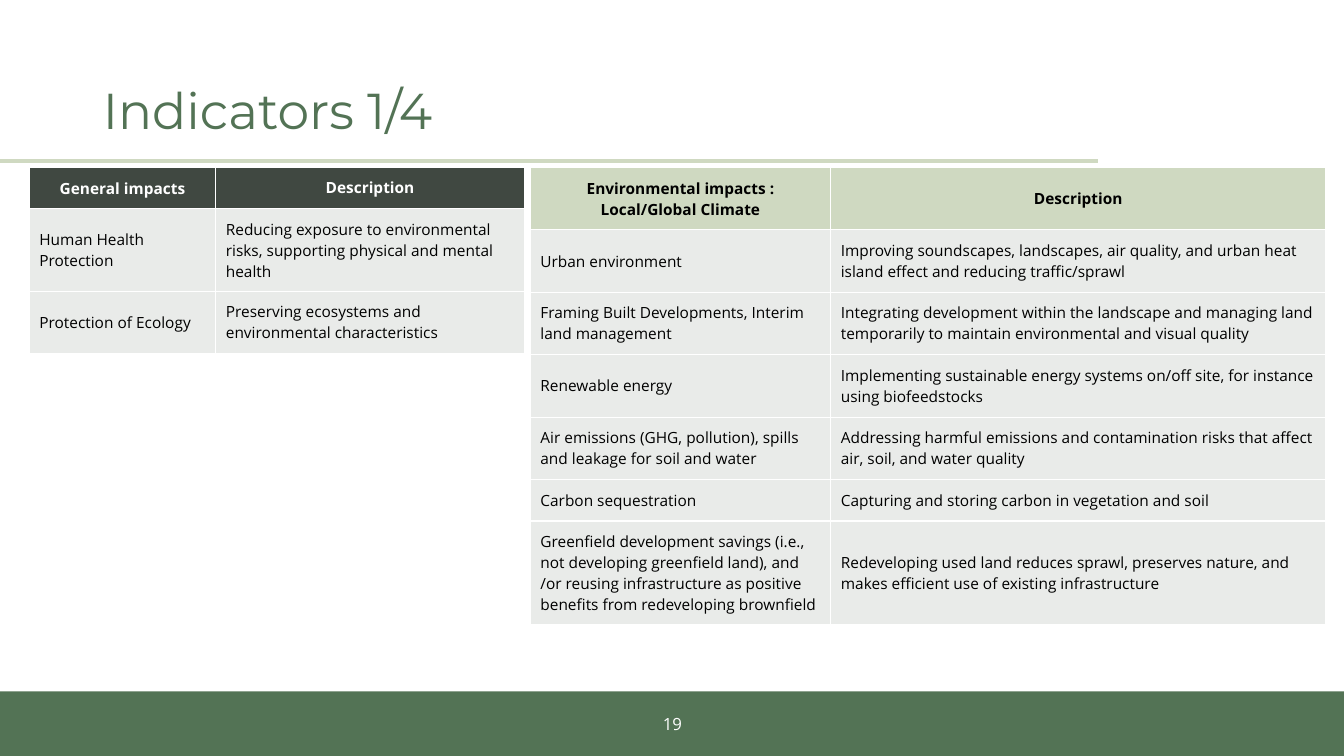
from dataclasses import dataclass

from lxml.etree import SubElement
from pptx import Presentation
from pptx.dml.color import RGBColor
from pptx.enum.shapes import MSO_CONNECTOR as Connector, MSO_SHAPE as Shape
from pptx.enum.text import MSO_ANCHOR as Anchor, MSO_AUTO_SIZE as AutoSize, PP_ALIGN as Align
from pptx.oxml.ns import qn
from pptx.util import Inches, Pt


@dataclass(frozen=True)
class Theme:
    green: str = "537355"
    sage: str = "CFD9C1"
    dark: str = "404841"
    pale: str = "E9EBE9"
    white: str = "FFFFFF"
    black: str = "000000"
    heading_font: str = "Montserrat"
    body_font: str = "Open Sans"
    title_size: float = 36
    number_size: float = 12
    table_size: float = 11
    rule_width: float = 3
    border_width: float = 1


THEME = Theme()
ROW_HEIGHTS = {1: 0.41, 2: 0.62, 3: 0.82, 4: 1.03}

GENERAL_IMPACTS = [
    (1, "General impacts", "Description"),
    (3, "Human Health Protection",
     "Reducing exposure to environmental risks, supporting physical and mental health"),
    (2, "Protection of Ecology",
     "Preserving ecosystems and environmental characteristics"),
]

ENVIRONMENTAL_IMPACTS = [
    (2, "Environmental impacts : Local/Global Climate", "Description"),
    (2, "Urban environment",
     "Improving soundscapes, landscapes, air quality, and urban heat island effect "
     "and reducing traffic/sprawl"),
    (2, "Framing Built Developments, Interim land management",
     "Integrating development within the landscape and managing land temporarily "
     "to maintain environmental and visual quality"),
    (2, "Renewable energy",
     "Implementing sustainable energy systems on/off site, for instance using biofeedstocks"),
    (2, "Air emissions (GHG, pollution), spills and leakage for soil and water",
     "Addressing harmful emissions and contamination risks that affect air, soil, "
     "and water quality"),
    (1, "Carbon sequestration", "Capturing and storing carbon in vegetation and soil"),
    (4, "Greenfield development savings (i.e., not developing greenfield land), and /or reusing "
        "infrastructure as positive benefits from redeveloping brownfield",
     "Redeveloping used land reduces sprawl, preserves nature, and makes efficient use "
     "of existing infrastructure"),
]


def write_text(frame, text, *, size, color, font=THEME.body_font, bold=False,
               align=Align.LEFT, spacing=None):
    frame.word_wrap = True
    para = frame.paragraphs[0]
    para.alignment = align
    if spacing:
        para.line_spacing = spacing
    span = para.add_run()
    span.text = text
    span.font.name = font
    span.font.size = Pt(size)
    span.font.bold = bold
    span.font.color.rgb = RGBColor.from_string(color)


def add_footer(page, number):
    band = page.shapes.add_shape(Shape.RECTANGLE, 0, Inches(6.86), Inches(13.33), Inches(0.64))
    band.shadow.inherit = False
    band.fill.solid()
    band.fill.fore_color.rgb = RGBColor.from_string(THEME.green)
    band.line.fill.background()
    box = page.shapes.add_textbox(Inches(5.17), Inches(6.98), Inches(3), Inches(0.4))
    box.text_frame.vertical_anchor = Anchor.MIDDLE
    write_text(box.text_frame, number, size=THEME.number_size, color=THEME.white,
               align=Align.CENTER)


def add_rule(page):
    rule = page.shapes.add_connector(Connector.STRAIGHT, 0, Inches(1.6), Inches(10.89), Inches(1.6))
    rule.line.color.rgb = RGBColor.from_string(THEME.sage)
    rule.line.width = Pt(THEME.rule_width)
    SubElement(rule._element.spPr, qn("a:effectLst"))


def set_title(page, text):
    title = page.shapes.title
    title.left, title.top = Inches(0.92), Inches(0.4)
    title.width, title.height = Inches(11.5), Inches(1.45)
    title.text_frame.auto_size = AutoSize.NONE
    title.text_frame.vertical_anchor = Anchor.MIDDLE
    write_text(title.text_frame, text, size=THEME.title_size, color=THEME.green,
               font=THEME.heading_font, spacing=0.9)


def set_borders(cell):
    properties = cell._tc.get_or_add_tcPr()
    for side in ("a:lnL", "a:lnR", "a:lnT", "a:lnB"):
        line = SubElement(properties, qn(side), w=str(Pt(THEME.border_width)))
        fill = SubElement(line, qn("a:solidFill"))
        SubElement(fill, qn("a:srgbClr"), val=THEME.white)


def format_cell(cell, text, fill, anchor, **text_format):
    cell.margin_left = cell.margin_right = Inches(0.1)
    cell.margin_top = cell.margin_bottom = Inches(0.1)
    cell.vertical_anchor = anchor
    set_borders(cell)
    cell.fill.solid()
    cell.fill.fore_color.rgb = RGBColor.from_string(fill)
    write_text(cell.text_frame, text, size=THEME.table_size, **text_format)


def add_impact_table(page, left, widths, rows, header_fill, header_color):
    heights = [ROW_HEIGHTS[lines] for lines, *_ in rows]
    frame = page.shapes.add_table(len(rows), len(widths), Inches(left), Inches(1.66),
                                  Inches(sum(widths)), Inches(sum(heights)))
    table = frame.table
    table.horz_banding = False
    for column, width in zip(table.columns, widths):
        column.width = Inches(width)
    for row_index, (_, *texts) in enumerate(rows):
        table.rows[row_index].height = Inches(heights[row_index])
        for column_index, text in enumerate(texts):
            cell = table.cell(row_index, column_index)
            if row_index == 0:
                anchor = Anchor.MIDDLE if column_index else Anchor.BOTTOM
                format_cell(cell, text, header_fill, anchor, color=header_color,
                            bold=True, align=Align.CENTER)
            else:
                format_cell(cell, text, THEME.pale, Anchor.MIDDLE, color=THEME.black)


def main():
    deck = Presentation()
    deck.slide_width, deck.slide_height = Inches(13.33), Inches(7.5)
    page = deck.slides.add_slide(deck.slide_layouts[5])
    add_footer(page, "19")
    add_rule(page)
    set_title(page, "Indicators 1/4")
    add_impact_table(page, 0.29, (1.85, 3.06), GENERAL_IMPACTS, THEME.dark, THEME.white)
    add_impact_table(page, 5.26, (2.98, 4.91), ENVIRONMENTAL_IMPACTS, THEME.sage, THEME.black)
    deck.save("out.pptx")


if __name__ == "__main__":
    main()
